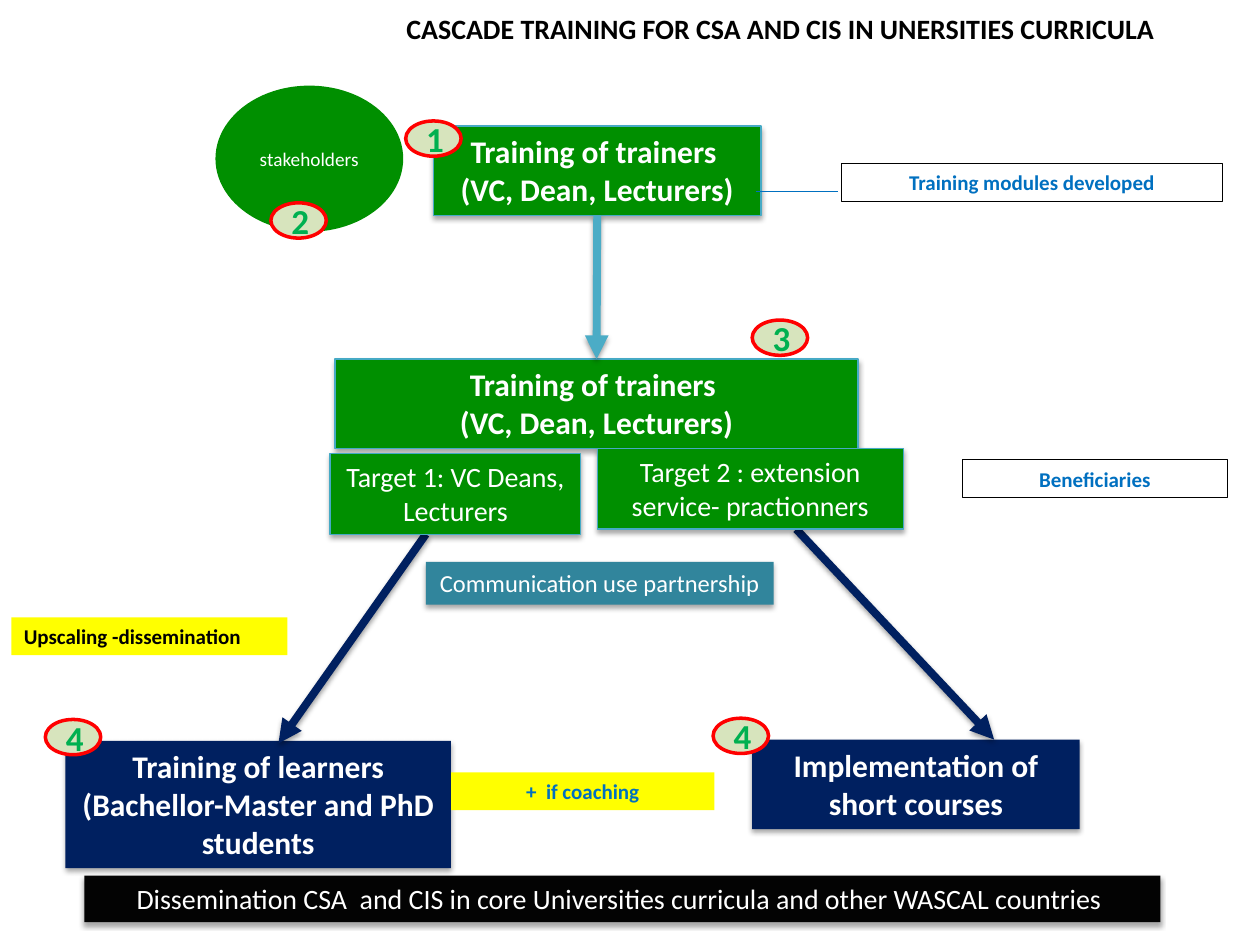
from dataclasses import dataclass
from typing import Optional

from lxml import etree
from pptx import Presentation
from pptx.dml.color import RGBColor
from pptx.enum.shapes import MSO_CONNECTOR, MSO_SHAPE
from pptx.enum.text import MSO_ANCHOR, MSO_AUTO_SIZE, PP_ALIGN
from pptx.oxml.ns import qn
from pptx.util import Inches, Pt

RECTANGLE = MSO_SHAPE.RECTANGLE
OVAL = MSO_SHAPE.OVAL
STRAIGHT = MSO_CONNECTOR.STRAIGHT
TOP, MIDDLE = MSO_ANCHOR.TOP, MSO_ANCHOR.MIDDLE
LEFT, CENTER = PP_ALIGN.LEFT, PP_ALIGN.CENTER
GROW, FIXED = MSO_AUTO_SIZE.SHAPE_TO_FIT_TEXT, MSO_AUTO_SIZE.NONE

BLACK = RGBColor(0x00, 0x00, 0x00)
WHITE = RGBColor(0xFF, 0xFF, 0xFF)
GREEN = RGBColor(0x00, 0x8F, 0x00)
NAVY = RGBColor(0x00, 0x20, 0x60)
TEAL = RGBColor(0x31, 0x85, 0x9C)
AQUA = RGBColor(0x4B, 0xAC, 0xC6)
AQUA_EDGE = RGBColor(0x46, 0xAA, 0xC5)
BLUE = RGBColor(0x00, 0x70, 0xC0)
YELLOW = RGBColor(0xFF, 0xFF, 0x00)
RED = RGBColor(0xFF, 0x00, 0x00)
PALE_GREEN = RGBColor(0xD7, 0xE4, 0xBD)
DIGIT_GREEN = RGBColor(0x00, 0xB0, 0x50)

FONT = "Calibri"
TRAINERS = "Training of trainers \n(VC, Dean, Lecturers)"


@dataclass(frozen=True)
class Box:
    text: str
    left: float
    top: float
    width: float
    height: float
    fill: Optional[RGBColor] = GREEN
    edge: Optional[RGBColor] = None
    edge_width: float = 0.75
    size: int = 18
    bold: bool = True
    color: RGBColor = WHITE
    align: PP_ALIGN = CENTER
    shape: MSO_SHAPE = RECTANGLE
    shadow: bool = True
    wrap: bool = True
    opacity: int = 100


@dataclass(frozen=True)
class Line:
    start: tuple[float, float]
    end: tuple[float, float]
    color: RGBColor = NAVY
    width: float = 4.5
    arrow: bool = True


def label(text: str, left: float, top: float, width: float,
          fill: Optional[RGBColor] = None, edge: Optional[RGBColor] = None,
          color: RGBColor = BLUE, align: PP_ALIGN = CENTER) -> Box:
    return Box(text, left, top, width, 0.3, fill, edge, size=12,
               color=color, align=align, shadow=False)


def badge(text: str, left: float, top: float) -> Box:
    return Box(text, left, top, 0.44, 0.28, PALE_GREEN, RED, 2, 20,
               color=DIGIT_GREEN, shape=OVAL, shadow=False)


STAGES = [
    Box(TRAINERS, 3.44, 1, 2.6, 0.71, edge=AQUA_EDGE),
    Box(TRAINERS, 2.66, 2.85, 4.15, 0.71, edge=AQUA_EDGE),
    Box("Training of learners (Bachellor-Master and PhD students",
        0.52, 5.88, 3.06, 1.01, NAVY),
    Box("Implementation of short courses", 5.97, 5.87, 2.6, 0.71, NAVY),
]
LINES = [
    Line((3.38, 4.24), (2.21, 5.9)),
    Line((6.32, 4.2), (7.89, 5.87)),
    Line((6, 1.52), (6.65, 1.52), BLUE, 0.75, False),
]
DETAILS = [
    Box("Target 1: VC Deans, Lecturers", 2.62, 3.6, 1.99, 0.64,
        edge=AQUA_EDGE, size=16, bold=False),
    Box("Communication use partnership", 3.38, 4.46, 2.76, 0.34, TEAL,
        size=14, bold=False, wrap=False),
    Box("Target 2 : extension service- practionners", 4.74, 3.56, 2.43, 0.64,
        edge=AQUA_EDGE, size=16, bold=False),
    Box("stakeholders", 1.71, 0.68, 1.49, 1.16, size=11, bold=False,
        shape=OVAL, shadow=False),
    Box("Dissemination CSA  and CIS in core Universities curricula and other "
        "WASCAL countries ", 0.67, 6.95, 8.54, 0.37, BLACK,
        size=16, bold=False, opacity=98),
    label("Training modules developed", 6.68, 1.3, 3.02, edge=BLACK),
    label("Beneficiaries", 7.64, 3.65, 2.1, edge=BLACK),
    label("Upscaling -dissemination", 0.09, 4.9, 2.19, YELLOW,
          color=BLACK, align=LEFT),
    label("+  if coaching", 3.58, 6.13, 2.09, YELLOW),
    badge("1", 3.22, 0.96),
    badge("2", 2.15, 1.61),
    badge("3", 5.97, 2.54),
    badge("4", 0.36, 5.71),
    badge("4", 5.66, 5.7),
]


def set_alpha(color_element, percent: int) -> None:
    etree.SubElement(color_element, qn("a:alpha"), val=str(percent * 1000))


def add_shadow(effects, opacity: int, distance: float) -> None:
    outer = etree.SubElement(
        effects, qn("a:outerShdw"), blurRad=str(Pt(3.1)),
        dist=str(Pt(distance)), dir="5400000", rotWithShape="0")
    set_alpha(etree.SubElement(outer, qn("a:srgbClr"), val=str(BLACK)), opacity)


def write_text(frame, text: str, size: int, bold: bool, color: RGBColor,
               align: PP_ALIGN) -> None:
    frame.text = text
    for para in frame.paragraphs:
        para.alignment = align
        para.font.name = FONT
        para.font.size = Pt(size)
        para.font.bold = bold
        para.font.color.rgb = color


def add_box(page, box: Box):
    shape = page.shapes.add_shape(
        box.shape, Inches(box.left), Inches(box.top),
        Inches(box.width), Inches(box.height))
    if box.fill is None:
        shape.fill.background()
    else:
        shape.fill.solid()
        shape.fill.fore_color.rgb = box.fill
    if box.opacity < 100:
        set_alpha(shape.element.spPr.find(".//" + qn("a:srgbClr")), box.opacity)
    if box.edge is None:
        shape.line.fill.background()
    else:
        shape.line.color.rgb = box.edge
        shape.line.width = Pt(box.edge_width)
    shape.shadow.inherit = False
    if box.shadow:
        add_shadow(shape.element.spPr.find(qn("a:effectLst")), 35, 1.8)
    frame = shape.text_frame
    frame.word_wrap = box.wrap
    frame.auto_size = FIXED if box.shape == OVAL else GROW
    frame.vertical_anchor = MIDDLE if box.shape == OVAL else TOP
    write_text(frame, box.text, box.size, box.bold, box.color, box.align)
    return shape


def add_line(page, line: Line):
    connector = page.shapes.add_connector(
        STRAIGHT, *(Inches(value) for value in line.start + line.end))
    connector.line.color.rgb = line.color
    connector.line.width = Pt(line.width)
    effects = etree.SubElement(connector.element.spPr, qn("a:effectLst"))
    if line.arrow:
        etree.SubElement(connector.line._get_or_add_ln(), qn("a:tailEnd"),
                         type="triangle")
        add_shadow(effects, 38, 1.6)
    return connector


def main() -> None:
    deck = Presentation()
    deck.slide_width, deck.slide_height = Inches(10), Inches(7.5)
    page = deck.slides.add_slide(deck.slide_layouts[5])

    title = page.shapes.title
    title.left, title.top = Inches(2.5), Inches(0.04)
    title.width, title.height = Inches(7.39), Inches(0.37)
    title.text_frame.auto_size = GROW
    title.text_frame.vertical_anchor = TOP
    write_text(title.text_frame,
               "CASCADE TRAINING FOR CSA AND CIS IN UNERSITIES CURRICULA",
               16, True, BLACK, CENTER)

    stages = [add_box(page, box) for box in STAGES]
    cascade = add_line(page, Line((4.74, 1.71), (4.74, 2.85), AQUA))
    cascade.begin_connect(stages[0], 2)
    cascade.end_connect(stages[1], 0)
    for line in LINES:
        add_line(page, line)
    for box in DETAILS:
        add_box(page, box)

    deck.save("out.pptx")


if __name__ == "__main__":
    main()
